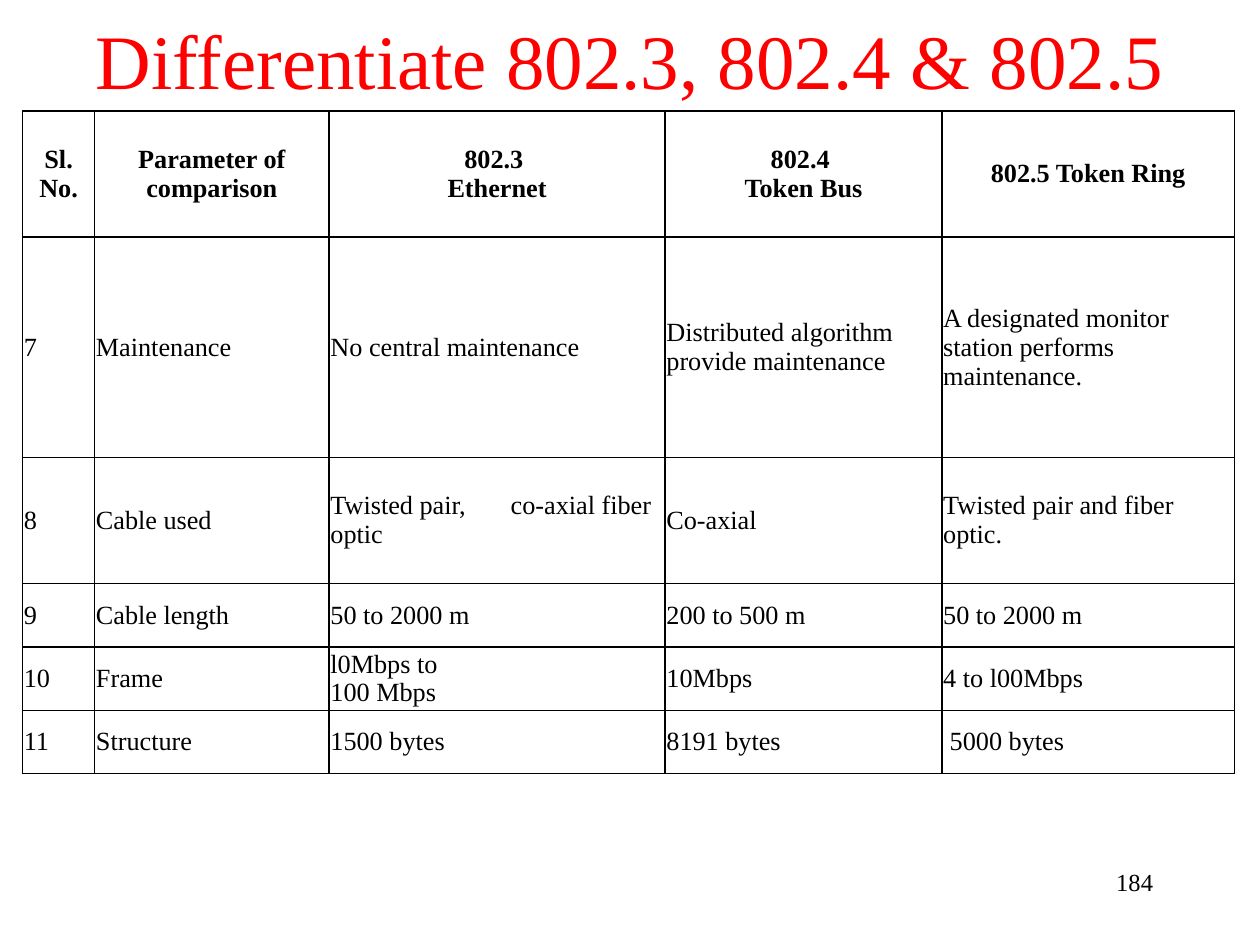
import pptx
import pptx.util
import pptx.dml.color
import pptx.enum.text
import pptx.oxml.ns
from lxml import etree

Pt = pptx.util.Pt
RGB = pptx.dml.color.RGBColor
ALIGN = pptx.enum.text.PP_ALIGN
MIDDLE = pptx.enum.text.MSO_ANCHOR.MIDDLE
TOP = pptx.enum.text.MSO_ANCHOR.TOP
qn = pptx.oxml.ns.qn

RED = RGB(0xFF, 0, 0)
BLACK = RGB(0, 0, 0)
FONT = "Times New Roman"

TITLE = "Differentiate 802.3, 802.4 & 802.5"
PAGE = "184"
ROWS = [
    ["Sl. No.", "Parameter of comparison", "802.3 \nEthernet", "802.4 \nToken Bus", "802.5 Token Ring"],
    ["7", "Maintenance", "No central maintenance", "Distributed algorithm provide maintenance",
     "A designated monitor station performs maintenance."],
    ["8", "Cable used", "Twisted pair,\tco-axial fiber optic", "Co-axial", "Twisted pair and fiber optic."],
    ["9", "Cable length", "50 to 2000 m", "200 to 500 m", "50 to 2000 m"],
    ["10", "Frame", "l0Mbps to\n100 Mbps", "10Mbps", "4 to l00Mbps"],
    ["11", "Structure", "1500 bytes", "8191 bytes", " 5000 bytes"],
]
TABLE_LEFT, TABLE_TOP = 12.9, 63.5
COL_WIDTHS = [41.2, 134, 192, 158.2, 167.2]
ROW_HEIGHTS = [72, 126, 72, 36.2, 36.2, 36.2]
TAB_STOP = 103

TITLE_FORMAT = {"size": Pt(44), "name": FONT}
HEAD_FORMAT = {"size": Pt(15), "name": FONT, "bold": True}
BODY_FORMAT = {"size": Pt(15), "name": FONT, "bold": False}
PAGE_FORMAT = {"size": Pt(14), "name": FONT}
CELL_FORMAT = {"margin_left": Pt(0.75), "margin_right": Pt(0.75), "margin_top": 0,
               "margin_bottom": 0, "vertical_anchor": MIDDLE}


def set_all(target, values):
    for key, value in values.items():
        setattr(target, key, value)


def write(tf, text, fmt, align, color=BLACK):
    tf.word_wrap = True
    tf.text = text
    for p in tf.paragraphs:
        p.alignment = align
        for r in p.runs:
            set_all(r.font, fmt)
            r.font.color.rgb = color
        if "\t" in p.text:
            tabs = etree.SubElement(p._p.get_or_add_pPr(), qn("a:tabLst"))
            etree.SubElement(tabs, qn("a:tab"), pos=str(Pt(TAB_STOP)), algn="l")


def add_text(s, box, text, fmt, align, anchor, color=BLACK):
    tf = s.shapes.add_textbox(*map(Pt, box)).text_frame
    tf.vertical_anchor = anchor
    write(tf, text, fmt, align, color)


def add_borders(cell):
    tcPr = cell._tc.get_or_add_tcPr()
    for i, side in enumerate(("lnL", "lnR", "lnT", "lnB")):
        ln = etree.Element(qn("a:" + side), w=str(Pt(1)))
        fill = etree.SubElement(ln, qn("a:solidFill"))
        etree.SubElement(fill, qn("a:srgbClr"), val=str(BLACK))
        tcPr.insert(i, ln)


def add_comparison(s):
    size = sum(COL_WIDTHS), sum(ROW_HEIGHTS)
    frame = s.shapes.add_table(len(ROWS), len(COL_WIDTHS), *map(Pt, (TABLE_LEFT, TABLE_TOP, *size)))
    table = frame.table
    for col, width in zip(table.columns, COL_WIDTHS):
        col.width = Pt(width)
    for i, (row, height) in enumerate(zip(table.rows, ROW_HEIGHTS)):
        row.height = Pt(height)
        fmt, align = (BODY_FORMAT, ALIGN.LEFT) if i else (HEAD_FORMAT, ALIGN.CENTER)
        for cell, text in zip(row.cells, ROWS[i]):
            set_all(cell, CELL_FORMAT)
            cell.fill.background()
            add_borders(cell)
            write(cell.text_frame, text, fmt, align)


def main():
    prs = pptx.Presentation()
    prs.slide_width, prs.slide_height = Pt(720), Pt(540)
    s = prs.slides.add_slide(prs.slide_layouts[6])
    add_text(s, (0, 6, 720, 55.5), TITLE, TITLE_FORMAT, ALIGN.CENTER, MIDDLE, RED)
    add_comparison(s)
    add_text(s, (516, 492, 150, 36), PAGE, PAGE_FORMAT, ALIGN.RIGHT, TOP)
    prs.save("out.pptx")


if __name__ == "__main__":
    main()
